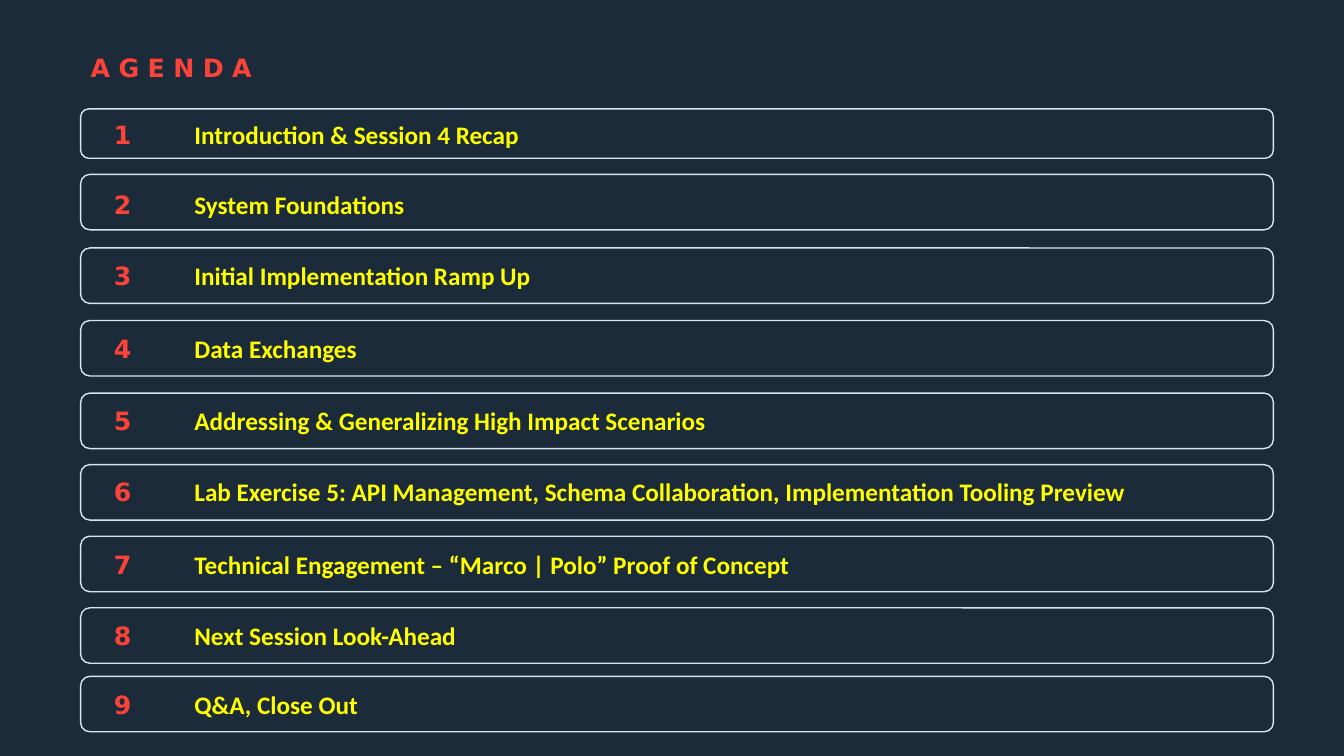
from dataclasses import dataclass

from pptx import Presentation
from pptx.dml.color import RGBColor
from pptx.enum.shapes import MSO_SHAPE as Shape
from pptx.enum.text import MSO_ANCHOR as Anchor, MSO_AUTO_SIZE as AutoSize, PP_ALIGN as Align
from pptx.slide import Slide
from pptx.text.text import _Paragraph as Paragraph, _Run as Run
from pptx.util import Emu, Pt

EMU_PER_PX = 9144  # 100 px to the inch


@dataclass(frozen=True)
class Theme:
    background: RGBColor = RGBColor(0x1C, 0x2B, 0x39)
    accent: RGBColor = RGBColor(0xFB, 0x43, 0x3A)
    topic: RGBColor = RGBColor(0xFF, 0xFF, 0x00)
    outline: RGBColor = RGBColor(0xD8, 0xE6, 0xF0)
    accent_font: str = "DejaVu Sans"
    topic_font: str = "Calibri"
    text_size: int = 18
    outline_width: int = 1
    title_spacing: int = 600  # hundredths of a point


@dataclass(frozen=True)
class AgendaItem:
    topic: str
    top: int
    text_top: int
    height: int = 55


THEME = Theme()
FRAME_LEFT, FRAME_WIDTH = 80, 1183
NUMBER_LEFT, NUMBER_WIDTH = 103, 61
TOPIC_LEFT, TOPIC_WIDTH = 183, 1024
TEXT_HEIGHT = 40

AGENDA = [
    AgendaItem("Introduction & Session 4 Recap", 108, 113, height=49),
    AgendaItem("System Foundations", 173, 183),
    AgendaItem("Initial Implementation Ramp Up", 246, 253),
    AgendaItem("Data Exchanges", 318, 326),
    AgendaItem("Addressing & Generalizing High Impact Scenarios", 390, 397),
    AgendaItem("Lab Exercise 5: API Management, Schema Collaboration, "
               "Implementation Tooling Preview", 461, 468),
    AgendaItem("Technical Engagement – “Marco | Polo” Proof of Concept", 532, 540),
    AgendaItem("Next Session Look-Ahead", 603, 611),
    AgendaItem("Q&A, Close Out", 671, 679),
]


def px(length: int) -> Emu:
    return Emu(length * EMU_PER_PX)


def add_run(para: Paragraph, text: str, font_name: str, color: RGBColor) -> Run:
    run = para.add_run()
    run.text = text
    run.font.name = font_name
    run.font.size = Pt(THEME.text_size)
    run.font.bold = True
    run.font.color.rgb = color
    return run


def set_title(page: Slide, text: str) -> None:
    title = page.shapes.title
    title.left, title.top, title.width, title.height = px(80), px(46), px(980), px(46)
    frame = title.text_frame
    frame.auto_size = AutoSize.NONE
    frame.word_wrap = True
    frame.vertical_anchor = Anchor.MIDDLE
    para = frame.paragraphs[0]
    para.alignment = Align.LEFT
    para.line_spacing = 0.9
    run = add_run(para, text, THEME.accent_font, THEME.accent)
    run.font._element.set("spc", str(THEME.title_spacing))


def add_frame(page: Slide, item: AgendaItem) -> None:
    outline = page.shapes.add_shape(Shape.ROUNDED_RECTANGLE, px(FRAME_LEFT), px(item.top),
                                    px(FRAME_WIDTH), px(item.height))
    outline.shadow.inherit = False
    outline.fill.background()
    outline.line.color.rgb = THEME.outline
    outline.line.width = Pt(THEME.outline_width)


def add_label(page: Slide, text: str, left: int, top: int, width: int,
              font_name: str, color: RGBColor) -> None:
    box = page.shapes.add_textbox(px(left), px(top), px(width), px(TEXT_HEIGHT))
    box.text_frame.word_wrap = True
    box.text_frame.auto_size = AutoSize.SHAPE_TO_FIT_TEXT
    add_run(box.text_frame.paragraphs[0], text, font_name, color)


def main() -> None:
    deck = Presentation()
    deck.slide_width, deck.slide_height = px(1333), px(750)
    page = deck.slides.add_slide(deck.slide_layouts.get_by_name("Title Only"))

    # Background and title
    page.background.fill.solid()
    page.background.fill.fore_color.rgb = THEME.background
    set_title(page, "AGENDA")

    # Numbered agenda rows
    for number, item in enumerate(AGENDA, start=1):
        add_frame(page, item)
        add_label(page, str(number), NUMBER_LEFT, item.text_top, NUMBER_WIDTH,
                  THEME.accent_font, THEME.accent)
        add_label(page, item.topic, TOPIC_LEFT, item.text_top, TOPIC_WIDTH,
                  THEME.topic_font, THEME.topic)

    deck.save("out.pptx")


if __name__ == "__main__":
    main()
